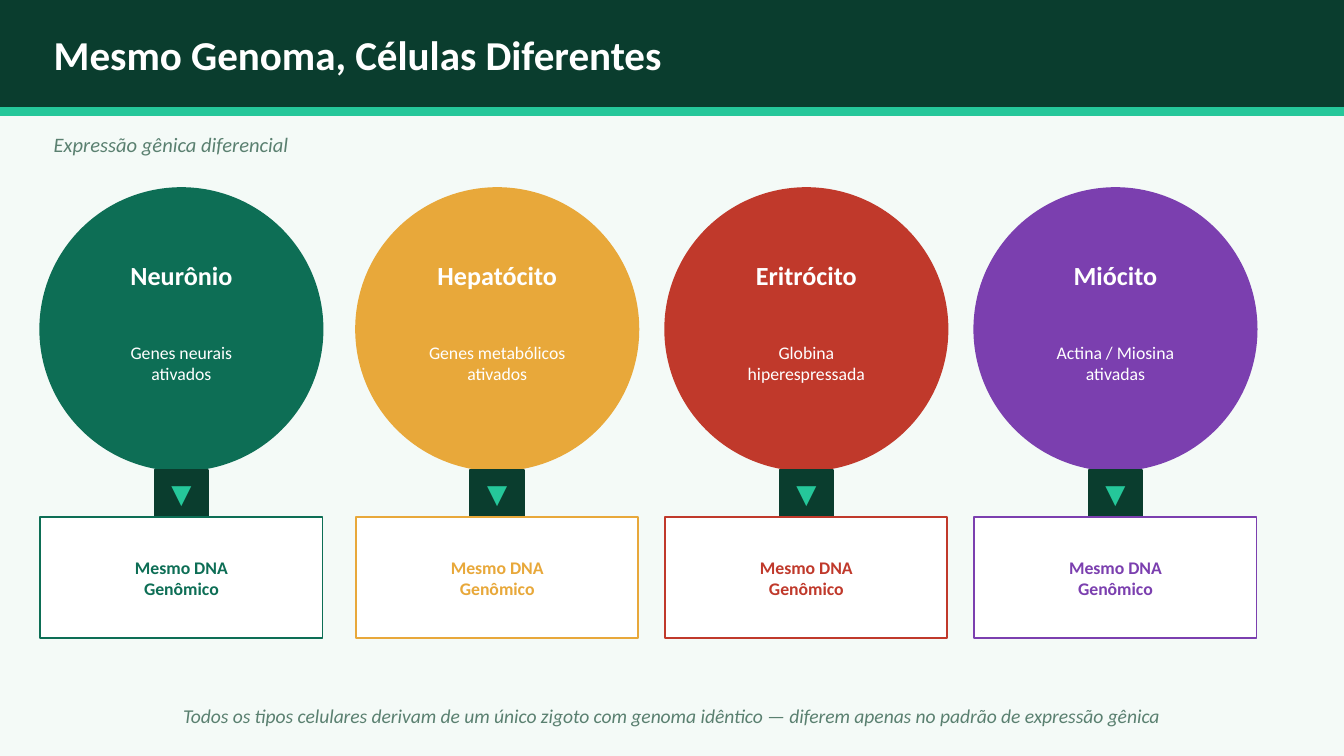
from dataclasses import dataclass

from pptx import Presentation
from pptx import util as u
from pptx.dml.color import RGBColor
from pptx.enum import shapes, text

# Grid of square cells: 100 columns across the slide, rows of the same size.
SLIDE_WIDTH = u.Inches(10)
SLIDE_HEIGHT = SLIDE_WIDTH * 9 // 16
COLUMNS = 100
CELL = SLIDE_WIDTH // COLUMNS
FONT = "Calibri"
COLORS = {
    "background": "F4FAF7",
    "dark": "0A3D2E",
    "accent": "25C79A",
    "muted": "5A8070",
    "white": "FFFFFF",
    "green": "0D6E55",
    "amber": "E8A83A",
    "red": "C0392B",
    "purple": "7B3FAF",
}
OVAL = shapes.MSO_SHAPE.OVAL
RECT = shapes.MSO_SHAPE.RECTANGLE
LEFT = text.PP_ALIGN.LEFT
CENTER = text.PP_ALIGN.CENTER


@dataclass(frozen=True)
class Box:
    """An area in grid cells."""
    col: float
    row: float
    cols: float
    rows: float

    def emu(self) -> list[int]:
        return [round(n * CELL) for n in (self.col, self.row, self.cols, self.rows)]


@dataclass(frozen=True)
class Style:
    size: float
    color: str
    bold: bool = False
    italic: bool = False
    align: text.PP_ALIGN = CENTER


@dataclass(frozen=True)
class CellType:
    col: float
    name: str
    genes: tuple[str, ...]
    color: str


CELL_TYPES = (
    CellType(3, "Neurônio", ("Genes neurais", "ativados"), "green"),
    CellType(26.5, "Hepatócito", ("Genes metabólicos", "ativados"), "amber"),
    CellType(49.5, "Eritrócito", ("Globina", "hiperespressada"), "red"),
    CellType(72.5, "Miócito", ("Actina / Miosina", "ativadas"), "purple"),
)
CELL_COLS = 21
ARROW_COLS = 4


def rgb(name: str) -> RGBColor:
    return RGBColor.from_string(COLORS[name])


def add_figure(s, kind: shapes.MSO_SHAPE, box: Box, fill: str, line: str = "") -> None:
    """Draw a filled shape; the outline takes the fill colour unless given."""
    sp = s.shapes.add_shape(kind, *box.emu())
    sp.shadow.inherit = False
    sp.fill.solid()
    sp.fill.fore_color.rgb = rgb(fill)
    sp.line.color.rgb = rgb(line or fill)
    sp.line.width = u.Pt(1)


def add_text(s, box: Box, lines: tuple[str, ...], style: Style) -> None:
    tf = s.shapes.add_textbox(*box.emu()).text_frame
    tf.word_wrap = True
    tf.vertical_anchor = text.MSO_ANCHOR.MIDDLE
    tf.margin_left = tf.margin_right = tf.margin_top = tf.margin_bottom = 0
    for i, line in enumerate(lines):
        p = tf.add_paragraph() if i else tf.paragraphs[0]
        p.alignment = style.align
        r = p.add_run()
        r.text = line
        r.font.name = FONT
        r.font.size = u.Pt(style.size)
        r.font.bold = style.bold
        r.font.italic = style.italic
        r.font.color.rgb = rgb(style.color)


def add_header(s) -> None:
    add_figure(s, RECT, Box(0, 0, COLUMNS, 8), "dark")
    add_figure(s, RECT, Box(0, 8, COLUMNS, 0.6), "accent")
    add_text(s, Box(4, 0.4, 92, 7.2), ("Mesmo Genoma, Células Diferentes",),
             Style(22, "white", bold=True, align=LEFT))
    add_text(s, Box(4, 9, 92, 3.5), ("Expressão gênica diferencial",),
             Style(11, "muted", italic=True, align=LEFT))


def add_cell_type(s, cell: CellType) -> None:
    """Draw the cell, the arrow below it and its DNA box."""
    col = cell.col
    arrow_col = col + (CELL_COLS - ARROW_COLS) / 2
    add_figure(s, OVAL, Box(col, 14, CELL_COLS, CELL_COLS), cell.color)
    add_text(s, Box(col, 18.5, CELL_COLS, 4), (cell.name,), Style(14, "white", bold=True))
    add_text(s, Box(col, 23, CELL_COLS, 8), cell.genes, Style(9.5, "white"))
    add_figure(s, RECT, Box(arrow_col, 35, ARROW_COLS, 3.5), "dark")
    add_text(s, Box(arrow_col - 0.2, 34.8, ARROW_COLS + 0.4, 3.8), ("▼",), Style(14, "accent"))
    add_figure(s, RECT, Box(col, 38.5, CELL_COLS, 9), "white", cell.color)
    add_text(s, Box(col, 38.8, CELL_COLS, 8.4), ("Mesmo DNA", "Genômico"),
             Style(9.5, cell.color, bold=True))


def main() -> None:
    prs = Presentation()
    prs.slide_width = SLIDE_WIDTH
    prs.slide_height = SLIDE_HEIGHT
    s = prs.slides.add_slide(prs.slide_layouts[6])
    s.background.fill.solid()
    s.background.fill.fore_color.rgb = rgb("background")
    add_header(s)
    for cell in CELL_TYPES:
        add_cell_type(s, cell)
    add_text(s, Box(3, 51.5, 94, 3.5),
             ("Todos os tipos celulares derivam de um único zigoto com genoma idêntico"
              " — diferem apenas no padrão de expressão gênica",),
             Style(10.5, "muted", italic=True))
    prs.save("out.pptx")


if __name__ == "__main__":
    main()
